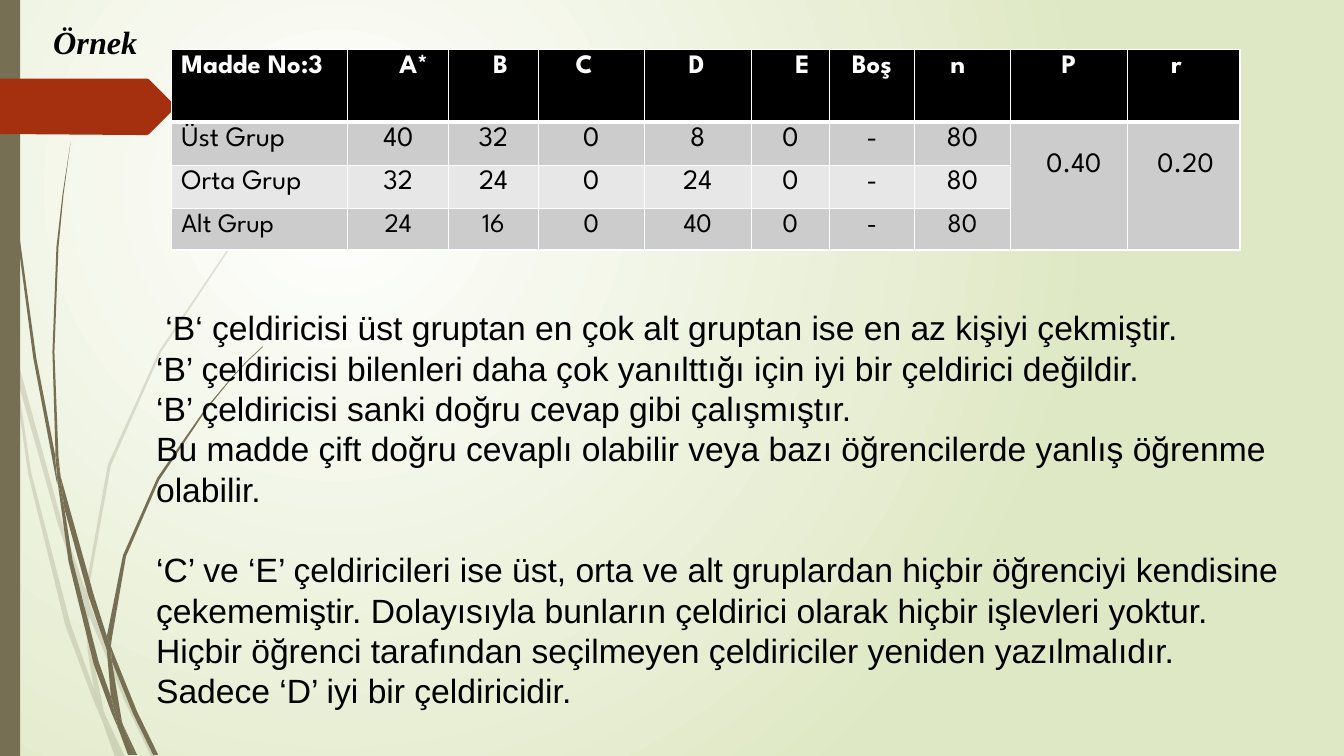
from itertools import pairwise

from lxml.etree import SubElement
from pptx import Presentation
from pptx.dml.color import RGBColor
from pptx.enum.shapes import MSO_SHAPE
from pptx.enum.text import MSO_ANCHOR, PP_ALIGN
from pptx.oxml.ns import qn
from pptx.util import Inches, Pt

OLIVE, RED, BLACK, WHITE = "766F54", "A53010", "000000", "FFFFFF"
BAND, LIGHT_BAND = "CCCCCC", "E7E7E7"

# Outlines in hundredths of an inch
PALE_GRASS = [
    [(11, 350), (9, 322), (0, 282), (0, 299), (10, 344)],
    [(58, 522), (84, 599), (85, 586), (62, 520), (14, 345), (17, 376)],
    [(92, 607), (88, 596), (88, 610), (123, 694), (150, 751), (155, 751), (127, 692)],
    [(119, 751), (124, 751), (105, 711)],
    [(93, 683), (70, 619), (31, 469), (17, 376), (11, 350), (28, 470), (65, 621),
     (92, 693), (101, 714), (99, 707)],
    [(84, 599), (87, 646), (93, 683), (96, 692), (105, 711), (103, 706), (91, 646),
     (88, 610), (88, 608)],
    [(88, 584), (110, 462), (160, 349), (229, 245), (268, 198), (290, 175), (312, 154),
     (312, 153), (289, 175), (268, 197), (228, 244), (158, 348), (107, 461), (85, 584),
     (85, 586), (88, 596)],
    [(101, 714), (114, 751), (119, 751)],
    [(88, 608), (88, 610), (88, 596), (85, 586), (84, 599)],
    [(96, 692), (93, 683), (99, 707), (101, 714), (119, 751), (105, 711)],
]
DARK_GRASS = [
    [(7, 110), (17, 233), (33, 355), (56, 477), (57, 481), (55, 457), (55, 453),
     (36, 355), (19, 232), (8, 109), (5, 48), (4, 0), (3, 0), (4, 48)],
    [(88, 592), (106, 645), (106, 633), (106, 631), (93, 590), (60, 472), (64, 505)],
    [(113, 649), (110, 641), (111, 656), (132, 708), (152, 749), (157, 749), (136, 706)],
    [(110, 691), (98, 657), (72, 556), (64, 505), (57, 477), (68, 557), (93, 659),
     (111, 708), (117, 722), (116, 717)],
    [(60, 472), (58, 453), (54, 349), (58, 245), (63, 193), (70, 141), (62, 193),
     (56, 245), (52, 349), (55, 449)],
    [(133, 749), (136, 749), (122, 719)],
    [(57, 477), (64, 505), (60, 472), (55, 449), (55, 453)],
    [(111, 633), (125, 552), (158, 476), (205, 406), (231, 374), (245, 359), (261, 344),
     (260, 344), (245, 358), (231, 373), (204, 405), (156, 474), (122, 551), (106, 631),
     (110, 641)],
    [(117, 722), (127, 749), (131, 749)],
    [(106, 645), (110, 691), (116, 706), (122, 719), (121, 716), (111, 656), (109, 651)],
    [(106, 645), (109, 651), (111, 656), (110, 641), (106, 631), (106, 633)],
    [(116, 706), (110, 691), (116, 717), (117, 722), (130, 749), (133, 749), (122, 719)],
]
RED_ARROW = [(173, 108), (148, 133), (146, 134), (136, 134), (0, 133), (0, 78),
             (146, 78), (148, 79), (173, 104), (174, 106)]

# Heading and the left margin that places it in its cell
HEADINGS = [("Madde No:3", 0.1), ("A*", 0.51), ("B", 0.44), ("C", 0.37), ("D", 0.44),
            ("E", 0.44), ("Boş", 0.22), ("n", 0.36), ("P", 0.51), ("r", 0.44)]
GROUPS = [("Üst Grup", "40", "32", "0", "8", "0", "-", "80"),
          ("Orta Grup", "32", "24", "0", "24", "0", "-", "80"),
          ("Alt Grup", "24", "16", "0", "40", "0", "-", "80")]
INDICES = [(8, "0.40", 0.36), (9, "0.20", 0.3)]
COLUMN_WIDTHS = [1.75, 1, 0.89, 1.05, 1.06, 0.78, 0.84, 0.95, 1.16, 1.12]
ROW_HEIGHTS = [0.72, 0.43, 0.43, 0.41]

COMMENTS = [
    " ‘B‘ çeldiricisi üst gruptan en çok alt gruptan ise en az kişiyi çekmiştir.",
    "‘B’ çeldiricisi bilenleri daha çok yanılttığı için iyi bir çeldirici değildir.",
    "‘B’ çeldiricisi sanki doğru cevap gibi çalışmıştır.",
    "Bu madde çift doğru cevaplı olabilir veya bazı öğrencilerde yanlış öğrenme olabilir.",
    "‘C’ ve ‘E’ çeldiricileri ise üst, orta ve alt gruplardan hiçbir öğrenciyi kendisine "
    "çekememiştir. Dolayısıyla bunların çeldirici olarak hiçbir işlevleri yoktur. "
    "Hiçbir öğrenci tarafından seçilmeyen çeldiriciler yeniden yazılmalıdır.",
    "Sadece ‘D’ iyi bir çeldiricidir.",
]


def color(code):
    return RGBColor.from_string(code)


def add_span(para, text, font, size, code=BLACK, bold=False, italic=False):
    span = para.add_run()
    span.text = text
    span.font.name, span.font.size = font, Pt(size)
    span.font.bold, span.font.italic = bold, italic
    span.font.color.rgb = color(code)


def paint(shape, code, alpha=None):
    shape.shadow.inherit = False
    shape.fill.solid()
    shape.fill.fore_color.rgb = color(code)
    shape.line.fill.background()
    if alpha:
        tint = shape.fill._xPr.find(".//" + qn("a:srgbClr"))
        SubElement(tint, qn("a:alpha"), val=str(alpha * 1000))


def add_outline(shapes, points, code, alpha=None):
    builder = shapes.build_freeform(*points[0], scale=Inches(0.01))
    builder.add_line_segments(points[1:], close=True)
    paint(builder.convert_to_shape(), code, alpha)


def add_background(slide):
    fill = slide.background.fill
    fill.gradient()
    for stop, code in zip(fill.gradient_stops, (WHITE, "DFE8C4")):
        stop.color.rgb = color(code)
    gradient = slide.element.find(".//" + qn("a:gradFill"))
    gradient.remove(gradient.find(qn("a:lin")))
    circle = SubElement(gradient, qn("a:path"), path="circle")
    SubElement(circle, qn("a:fillToRect"), l="50000", t="50000", r="100000", b="100000")


def add_decoration(slide):
    for stems, alpha in ((PALE_GRASS, 20), (DARK_GRASS, None)):
        group = slide.shapes.add_group_shape()
        for stem in stems:
            add_outline(group.shapes, stem, OLIVE, alpha)
    bar = slide.shapes.add_shape(MSO_SHAPE.RECTANGLE, 0, 0, Inches(0.2), Inches(7.5))
    paint(bar, OLIVE)
    add_outline(slide.shapes, RED_ARROW, RED)


def style_cell(cell, row):
    # Borders go before the fill in the cell properties
    properties = cell._tc.get_or_add_tcPr()
    widths = {"L": 1, "R": 1, "T": 3 if row == 1 else 1, "B": 3 if row == 0 else 1}
    for side, width in widths.items():
        border = SubElement(properties, qn("a:ln" + side), w=str(Pt(width)))
        SubElement(SubElement(border, qn("a:solidFill")), qn("a:srgbClr"), val=WHITE)
    cell.fill.solid()
    cell.fill.fore_color.rgb = color((BLACK, BAND, LIGHT_BAND, BAND)[row])
    cell.vertical_anchor = MSO_ANCHOR.TOP


def add_item_table(slide, left, top, width, height):
    table = slide.shapes.add_table(len(ROW_HEIGHTS), len(COLUMN_WIDTHS), Inches(left),
                                   Inches(top), Inches(width), Inches(height)).table
    for column, size in zip(table.columns, COLUMN_WIDTHS):
        column.width = Inches(size)
    for index, size in enumerate(ROW_HEIGHTS):
        table.rows[index].height = Inches(size)
        for cell in table.rows[index].cells:
            style_cell(cell, index)

    def write(row, column, text, size, code=BLACK, bold=False):
        cell = table.cell(row, column)
        add_span(cell.text_frame.paragraphs[0], text, "League Spartan", size, code, bold)
        return cell

    for column, (heading, margin) in enumerate(HEADINGS):
        write(0, column, heading, 19, WHITE, True).margin_left = Inches(margin)
    for row, values in enumerate(GROUPS, 1):
        for column, value in enumerate(values):
            cell = write(row, column, value, 19 if row == 3 else 20)
            if column:
                cell.text_frame.paragraphs[0].alignment = PP_ALIGN.CENTER
    for column, value, margin in INDICES:
        table.cell(1, column).merge(table.cell(3, column))
        cell = write(1, column, value, 19 if column > 9 else 20)
        cell.margin_left, cell.margin_top = Inches(margin), Inches(0.31)


def add_text_box(slide, left, top, width, height):
    box = slide.shapes.add_textbox(Inches(left), Inches(top), Inches(width), Inches(height))
    box.text_frame.word_wrap = True
    return box.text_frame


def add_label(slide, left, top, width, height):
    frame = add_text_box(slide, left, top, width, height)
    add_span(frame.paragraphs[0], "Örnek", "Times New Roman", 23, bold=True, italic=True)


def add_comments(slide, left, top, width, height):
    frame = add_text_box(slide, left, top, width, height)
    for index, text in enumerate(COMMENTS):
        para = frame.add_paragraph() if index else frame.paragraphs[0]
        para.line_spacing = Pt(28.8)
        if text.startswith("‘C’"):
            para.space_before = Pt(28.8)
        add_span(para, text, "Arial", 24)


def main():
    deck = Presentation()
    deck.slide_width, deck.slide_height = Inches(13.33), Inches(7.5)
    page = deck.slides.add_slide(deck.slide_layouts[6])
    add_background(page)
    add_decoration(page)
    add_item_table(page, 1.7, 0.49, 10.6, 2.02)
    add_label(page, 0.43, 0.17, 1.14, 0.49)
    add_comments(page, 1.45, 3, 11.55, 4.14)
    deck.save("out.pptx")


if __name__ == "__main__":
    main()
